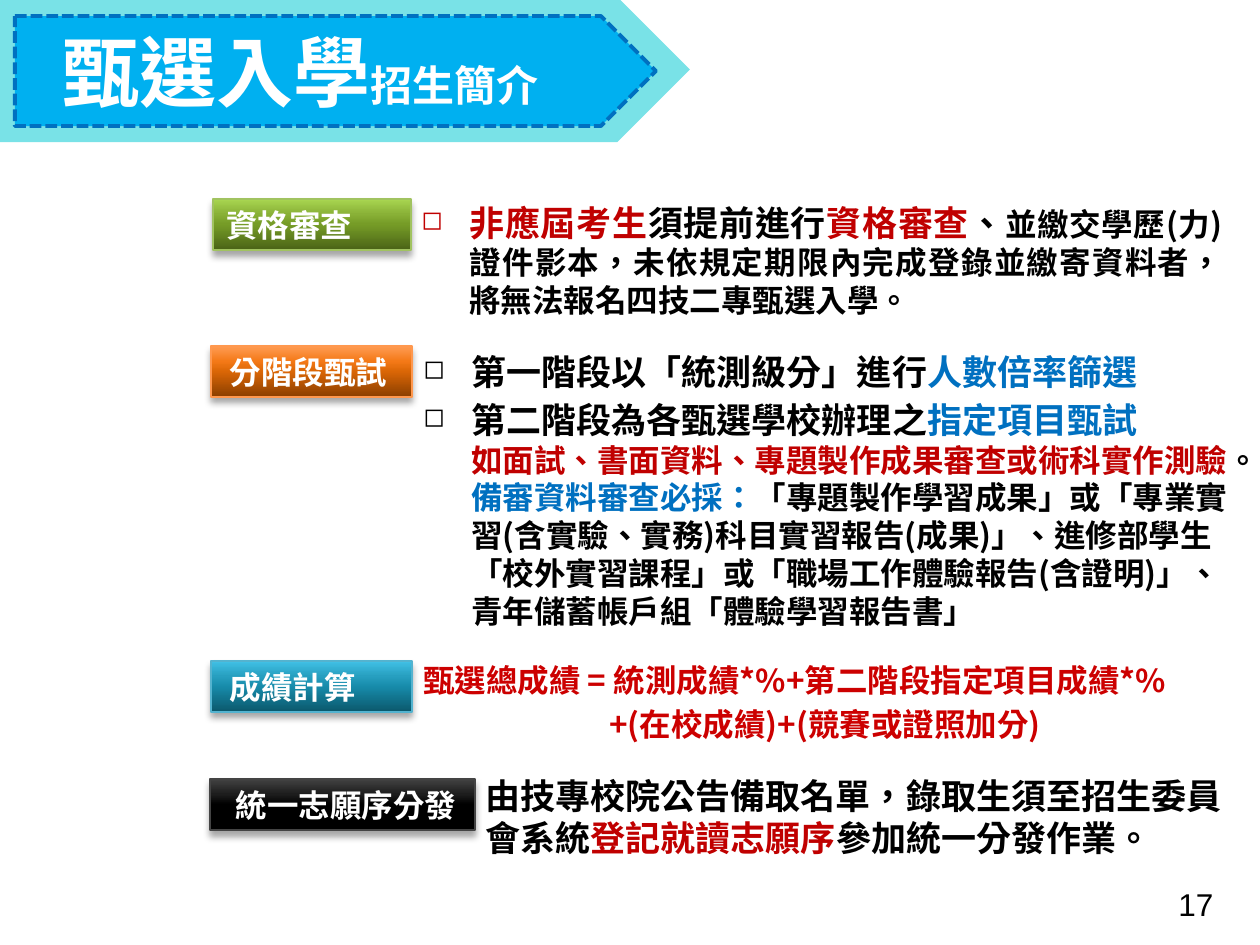
import pptx
import pptx.dml.color
import pptx.enum.dml
import pptx.enum.shapes
import pptx.enum.text
import pptx.oxml
import pptx.oxml.ns
import pptx.util
import lxml.etree

RGB = pptx.dml.color.RGBColor
SHAPE = pptx.enum.shapes.MSO_SHAPE
ANCHOR = pptx.enum.text.MSO_ANCHOR
ALIGN = pptx.enum.text.PP_ALIGN
qn = pptx.oxml.ns.qn

BLACK = RGB(0x00, 0x00, 0x00)
WHITE = RGB(0xFF, 0xFF, 0xFF)
BLUE = RGB(0x00, 0x70, 0xC0)
SKY = RGB(0x00, 0xB0, 0xF0)
AQUA = RGB(0x79, 0xE2, 0xE7)
RED = RGB(0xC0, 0x00, 0x00)
SCARLET = RGB(0xCC, 0x00, 0x00)
GREEN_LINE = RGB(0xA1, 0xC3, 0x60)
ORANGE_LINE = RGB(0xFF, 0x98, 0x4E)
TEAL_LINE = RGB(0x54, 0xB3, 0xCF)
GREY_LINE = RGB(0x44, 0x44, 0x44)
GREENS = [RGB.from_string(c) for c in ("4A6316", "769C27", "89B137", "A9D651")]
ORANGES = [RGB.from_string(c) for c in ("8B3F00", "DA6606", "F47917", "FF9C54")]
TEALS = [RGB.from_string(c) for c in ("0B586C", "178BAA", "279FC0", "41C1E6")]
GREYS = [RGB.from_string(c) for c in ("000000", "000000", "1D1D1D", "424242")]


class SlideBuilder:
    """Hold the style and the current slide, and add each kind of element."""

    SCALE = 914400 / 126
    FONT = "Noto Sans CJK SC"
    STOPS = (0, 50, 70, 100)
    SHADOW = (
        f'<a:outerShdw {pptx.oxml.ns.nsdecls("a")} blurRad="50800" dist="38100" '
        'dir="5400000" rotWithShape="0"><a:srgbClr val="000000">'
        '<a:alpha val="35000"/></a:srgbClr></a:outerShdw>'
    )

    def __init__(self, prs):
        self.prs = prs
        prs.slide_width, prs.slide_height = self.px(1260), self.px(945)
        self.slide = prs.slides.add_slide(prs.slide_layouts[6])

    def px(self, n):
        return pptx.util.Emu(round(n * self.SCALE))

    def paragraph(self, p, runs, indent=0, hang=0, font=FONT, bold=True, **form):
        for name, value in form.items():
            setattr(p, name, value)
        pPr = p._p.get_or_add_pPr()
        pPr.set("marL", str(self.px(indent)))
        pPr.set("indent", str(-self.px(hang)))
        if hang:
            lxml.etree.SubElement(pPr, qn("a:buSzPct")).set("val", "75000")
            lxml.etree.SubElement(pPr, qn("a:buChar")).set("char", "◻")
        for text, size, color in runs:
            r = p.add_run()
            r.text = text.rstrip("\n")
            style = {"name": font, "size": pptx.util.Pt(size), "bold": bold}
            for name, value in style.items():
                setattr(r.font, name, value)
            r.font.color.rgb = color
            r._r.rPr.set("lang", "zh-TW")
            lxml.etree.SubElement(r._r.rPr, qn("a:ea")).set("typeface", font)
            if text.endswith("\n"):
                p.add_line_break()

    def text(self, box, paragraphs):
        sp = self.slide.shapes.add_textbox(*map(self.px, box))
        tf = sp.text_frame
        tf.word_wrap = True
        for i, form in enumerate(paragraphs):
            p = tf.add_paragraph() if i else tf.paragraphs[0]
            self.paragraph(p, **form)

    def shape(self, kind, box):
        sp = self.slide.shapes.add_shape(kind, *map(self.px, box))
        sp.shadow.inherit = False
        return sp

    def arrow(self, box, fill, line=None, runs=()):
        sp = self.shape(SHAPE.PENTAGON, box)
        sp.fill.solid()
        sp.fill.fore_color.rgb = fill
        if line is None:
            sp.line.fill.background()
        else:
            sp.line.color.rgb = line
            sp.line.width = pptx.util.Pt(2.25)
            sp.line.dash_style = pptx.enum.dml.MSO_LINE.SQUARE_DOT
        if runs:
            sp.text_frame.vertical_anchor = ANCHOR.MIDDLE
            self.paragraph(sp.text_frame.paragraphs[0], runs, indent=35,
                           font="Noto Sans Mono", alignment=ALIGN.LEFT)

    def label(self, box, text, left, colors, line):
        sp = self.shape(SHAPE.RECTANGLE, box)
        sp.fill.gradient()
        sp.fill.gradient_angle = 90
        stops = sp._element.spPr.find(qn("a:gradFill")).find(qn("a:gsLst"))
        for gs in list(stops):
            stops.remove(gs)
        for pos, color in zip(self.STOPS, colors):
            gs = lxml.etree.SubElement(stops, qn("a:gs"))
            gs.set("pos", str(pos * 1000))
            lxml.etree.SubElement(gs, qn("a:srgbClr")).set("val", str(color))
        sp.line.color.rgb = line
        sp.line.width = pptx.util.Pt(1)
        effects = sp._element.spPr.find(qn("a:effectLst"))
        effects.append(pptx.oxml.parse_xml(self.SHADOW))
        tf = sp.text_frame
        form = {"word_wrap": False, "vertical_anchor": ANCHOR.MIDDLE,
                "margin_left": self.px(left), "margin_top": 0, "margin_bottom": 0}
        for name, value in form.items():
            setattr(tf, name, value)
        self.paragraph(tf.paragraphs[0], [(text, 18, WHITE)], alignment=ALIGN.LEFT)


def body(runs, before, **form):
    return {"runs": runs, "space_before": pptx.util.Pt(before), **form}


def main():
    prs = pptx.Presentation()
    s = SlideBuilder(prs)
    s.text((1166, 879, 79, 50),
           [{"runs": [("17", 18, BLACK)], "font": "Arial", "bold": False}])
    s.text((411, 344, 832, 475), [
        body([("第一階段以「統測級分」進行", 20, BLACK),
              ("人數倍率篩選", 20, BLUE)], 3.6, indent=48, hang=48),
        body([("第二階段為各甄選學校辦理之", 20, BLACK),
              ("指定項目甄試\n", 20, BLUE),
              ("如面試、書面資料、專題製作成果審查或術科實作測驗", 18, RED),
              ("。", 18, BLACK),
              ("備審資料審查必採：", 18, BLUE),
              ("「專題製作學習成果」或「專業實習(含實驗、實務)科目實習報告(成果)」、"
               "進修部學生「校外實習課程」或「職場工作體驗報告(含證明)」、"
               "青年儲蓄帳戶組「體驗學習報告書」", 18, BLACK)], 3.6, indent=48, hang=48),
        body([("甄選總成績 = 統測成績*%+第二階段指定項目成績*%", 18, SCARLET)], 18),
        body([("+(在校成績)+(競賽或證照加分)", 18, SCARLET)], 3.6, indent=186),
        body([("由技專校院公告備取名單，錄取生須至招生委員會系統", 20, BLACK),
              ("登記就讀志願序", 20, RED),
              ("參加統一分發作業。", 20, BLACK)], 18, indent=62),
    ])
    s.arrow((-5, -3, 695, 145), AQUA)
    s.arrow((15, 16, 641, 110), SKY, BLUE,
            [("甄選入學", 44, WHITE), ("招生簡介", 24, WHITE)])
    s.text((223, 195, 1012, 176), [
        body([("非應屆考生", 20, RED), ("須提前進行", 20, BLACK),
              ("資格審查", 20, RED), ("、", 20, BLACK),
              ("並繳交學歷(力)證件影本，未依規定期限內完成登錄並繳寄資料者，"
               "將無法報名四技二專甄選入學。", 18, BLACK)],
             12, indent=234, hang=48, alignment=ALIGN.JUSTIFY),
    ])
    for box, text, left, colors, line in (
        ((213, 199, 198, 51), "資格審查", 13, GREENS, GREEN_LINE),
        ((211, 346, 201, 51), "分階段甄試", 19, ORANGES, ORANGE_LINE),
        ((211, 661, 201, 51), "成績計算", 19, TEALS, TEAL_LINE),
        ((210, 779, 265, 51), "統一志願序分發", 26, GREYS, GREY_LINE),
    ):
        s.label(box, text, left, colors, line)
    prs.save("out.pptx")


if __name__ == "__main__":
    main()
